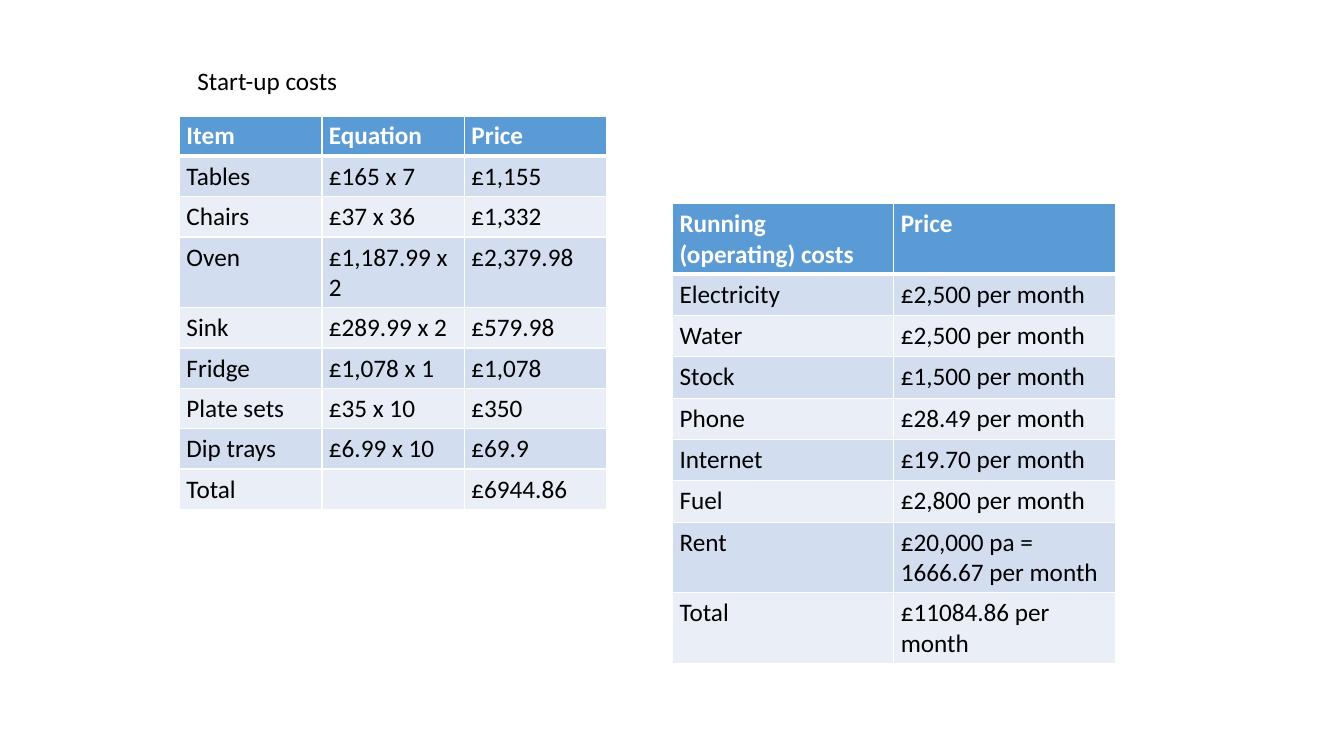
from lxml.etree import SubElement
from pptx import Presentation
from pptx.dml.color import RGBColor
from pptx.enum.text import MSO_AUTO_SIZE as AutoSize
from pptx.oxml.ns import qn
from pptx.util import Inches, Pt

BLACK, WHITE = "000000", "FFFFFF"
HEADER_FILL = "5B9BD5"
BAND_FILLS = ["EAEFF7", "D2DEEF"]
FONT = {"name": "Calibri", "size": Pt(18)}
CELL_MARGINS = {
    "margin_left": Inches(0.07),
    "margin_right": Inches(0.07),
    "margin_top": Inches(0.05),
    "margin_bottom": Inches(0.05),
}

STARTUP_COSTS = [
    ["Item", "Equation", "Price"],
    ["Tables", "£165 x 7", "£1,155"],
    ["Chairs", "£37 x 36", "£1,332"],
    ["Oven", "£1,187.99 x 2", "£2,379.98"],
    ["Sink", "£289.99 x 2", "£579.98"],
    ["Fridge", "£1,078 x 1", "£1,078"],
    ["Plate sets", "£35 x 10", "£350"],
    ["Dip trays", "£6.99 x 10", "£69.9"],
    ["Total", "", "£6944.86"],
]
RUNNING_COSTS = [
    ["Running (operating) costs", "Price"],
    ["Electricity", "£2,500 per month"],
    ["Water", "£2,500 per month"],
    ["Stock", "£1,500 per month"],
    ["Phone", "£28.49 per month"],
    ["Internet", "£19.70 per month"],
    ["Fuel", "£2,800 per month"],
    ["Rent", "£20,000 pa = 1666.67 per month"],
    ["Total", "£11084.86 per month"],
]
COST_TABLES = [
    (STARTUP_COSTS, 1.78, 1.15, 4.24, 0.39),
    (RUNNING_COSTS, 6.67, 2.02, 4.39, 0.41),
]


def rgb(color):
    return RGBColor.from_string(color)


def write_text(paragraph, text, color, bold=False):
    run = paragraph.add_run()
    run.text = text
    for name, value in {**FONT, "bold": bold}.items():
        setattr(run.font, name, value)
    run.font.color.rgb = rgb(color)


presentation = Presentation()
presentation.slide_width = Inches(13.33)
presentation.slide_height = Inches(7.5)
slide = presentation.slides.add_slide(presentation.slide_layouts[6])

title = slide.shapes.add_textbox(Inches(1.86), Inches(0.6), Inches(1.75), Inches(0.4))
title.text_frame.word_wrap = True
title.text_frame.auto_size = AutoSize.SHAPE_TO_FIT_TEXT
write_text(title.text_frame.paragraphs[0], "Start-up costs", BLACK)

for costs, left, top, width, row_height in COST_TABLES:
    table = slide.shapes.add_table(
        len(costs), len(costs[0]), Inches(left), Inches(top),
        Inches(width), Inches(row_height * len(costs)),
    ).table
    for row, values in enumerate(costs):
        is_header = row == 0
        border_widths = {
            "a:lnL": 1,
            "a:lnR": 1,
            "a:lnT": 3 if row == 1 else 1,
            "a:lnB": 3 if is_header else 1,
        }
        for column, value in enumerate(values):
            cell = table.cell(row, column)
            for name, margin in CELL_MARGINS.items():
                setattr(cell, name, margin)
            properties = cell._tc.get_or_add_tcPr()
            for tag, points in border_widths.items():
                line = SubElement(properties, qn(tag), w=str(Pt(points)))
                line_fill = SubElement(line, qn("a:solidFill"))
                SubElement(line_fill, qn("a:srgbClr"), val=WHITE)
            cell.fill.solid()
            cell.fill.fore_color.rgb = rgb(HEADER_FILL if is_header else BAND_FILLS[row % 2])
            if value:
                text_color = WHITE if is_header else BLACK
                write_text(cell.text_frame.paragraphs[0], value, text_color, is_header)

presentation.save("out.pptx")
